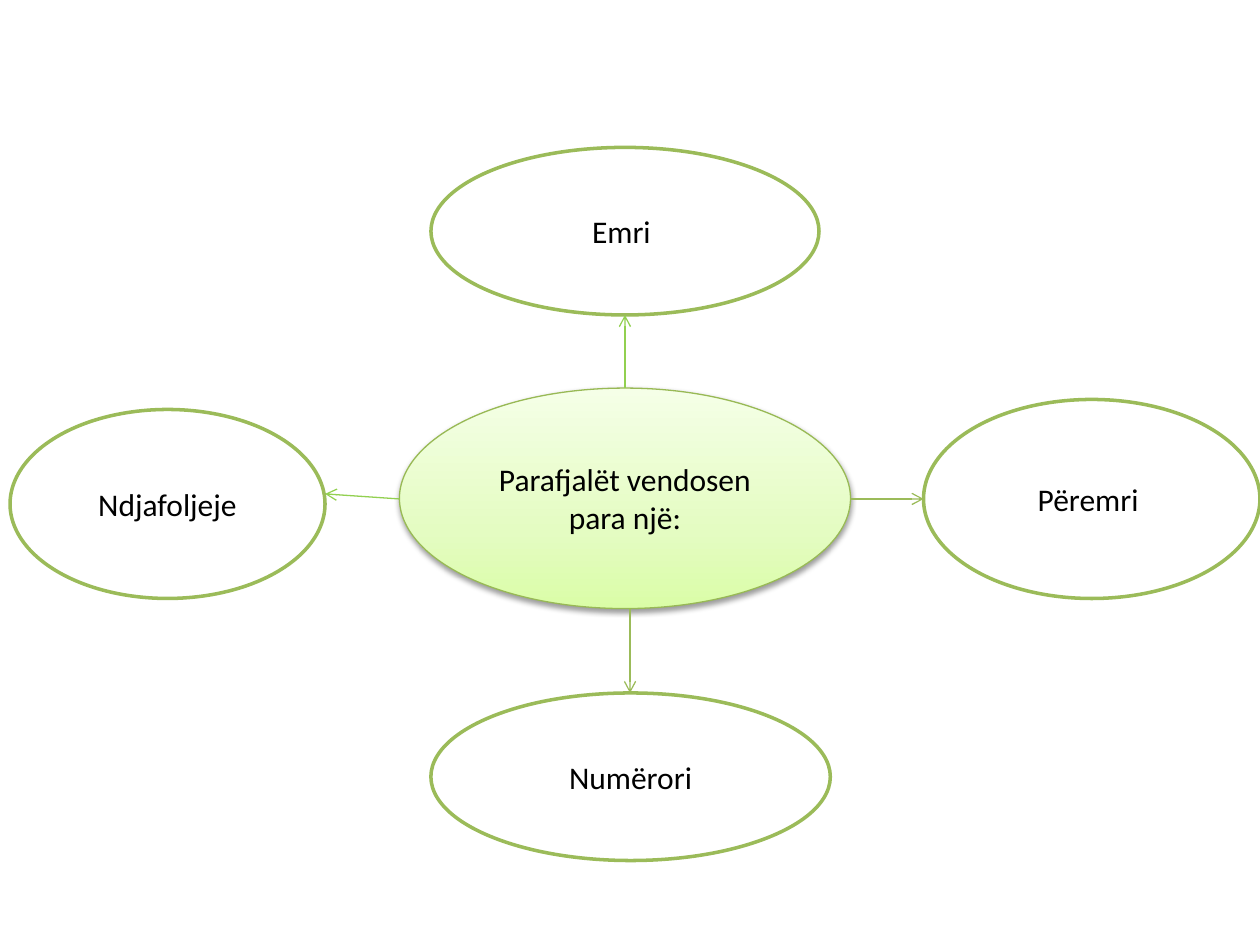
from copy import deepcopy

from lxml import etree
from pptx import Presentation
from pptx.dml.color import RGBColor
from pptx.enum.shapes import MSO_CONNECTOR, MSO_SHAPE
from pptx.enum.text import MSO_ANCHOR, PP_ALIGN
from pptx.oxml import parse_xml
from pptx.oxml.ns import nsdecls, qn
from pptx.util import Inches, Pt

ELLIPSE = MSO_SHAPE.OVAL
STRAIGHT = MSO_CONNECTOR.STRAIGHT
MIDDLE = MSO_ANCHOR.MIDDLE
CENTER = PP_ALIGN.CENTER

GREEN = "9BBB59"
BRIGHT_GREEN = "92D050"


def rgb(value):
    return RGBColor.from_string(value)


def add_oval(slide, text, box, line_color, line_width):
    oval = slide.shapes.add_shape(ELLIPSE, *[Inches(v) for v in box])
    oval.shadow.inherit = False
    oval.fill.solid()
    oval.fill.fore_color.rgb = rgb("FFFFFF")
    oval.line.color.rgb = rgb(line_color)
    oval.line.width = Pt(line_width)
    frame = oval.text_frame
    frame.word_wrap = True
    frame.vertical_anchor = MIDDLE
    label = frame.paragraphs[0]
    label.text = text
    label.alignment = CENTER
    label.font.name = "Calibri"
    label.font.size = Pt(18)
    label.font.color.rgb = rgb("000000")
    return oval


prs = Presentation()
prs.slide_width = Inches(10)
prs.slide_height = Inches(7.5)
slide = prs.slides.add_slide(prs.slide_layouts[6])

# Central topic: gradient rising from dark to light, with a soft shadow below
topic = add_oval(slide, "Parafjalët vendosen para një:",
                 (3.17, 3.08, 3.58, 1.75), "98B955", 0.75)
topic.fill.gradient()
topic.fill.gradient_angle = 90
stop_list = topic._element.spPr.find(".//" + qn("a:gsLst"))
stop_list.insert(1, deepcopy(stop_list[0]))
gradient = [(0, "DAFDA7"), (0.35, "E4FCC2"), (1, "F5FFE7")]
for stop, (position, color) in zip(topic.fill.gradient_stops, gradient):
    stop.position = position
    stop.color.rgb = rgb(color)

effects = topic._element.spPr.find(qn("a:effectLst"))
effects.append(parse_xml(
    f'<a:outerShdw {nsdecls("a")} blurRad="{Pt(3.1)}" dist="{Pt(1.6)}" '
    'dir="5400000" rotWithShape="0">'
    '<a:srgbClr val="000000"><a:alpha val="38000"/></a:srgbClr>'
    '</a:outerShdw>'))

# Word classes around the topic
word_classes = [
    ("Emri ", (3.42, 1.17, 3.08, 1.33)),
    ("Përemri ", (7.33, 3.17, 2.67, 1.58)),
    ("Ndjafoljeje", (0.08, 3.25, 2.5, 1.5)),
    ("Numërori", (3.42, 5.5, 3.17, 1.33)),
]
for word_class, box in word_classes:
    add_oval(slide, word_class, box, GREEN, 2)

# Arrows from the topic to each word class
arrows = [
    ((4.96, 3.08), (4.96, 2.5), BRIGHT_GREEN),
    ((5, 4.83), (5, 5.5), GREEN),
    ((6.75, 3.96), (7.33, 3.96), GREEN),
    ((3.17, 3.96), (2.58, 3.92), BRIGHT_GREEN),
]
for start, end, color in arrows:
    arrow = slide.shapes.add_connector(
        STRAIGHT, *[Inches(v) for v in start + end])
    arrow.line.color.rgb = rgb(color)
    arrow.line.width = Pt(0.75)
    etree.SubElement(arrow.line._get_or_add_ln(), qn("a:tailEnd"), type="arrow")
    etree.SubElement(arrow._element.spPr, qn("a:effectLst"))

prs.save("out.pptx")
